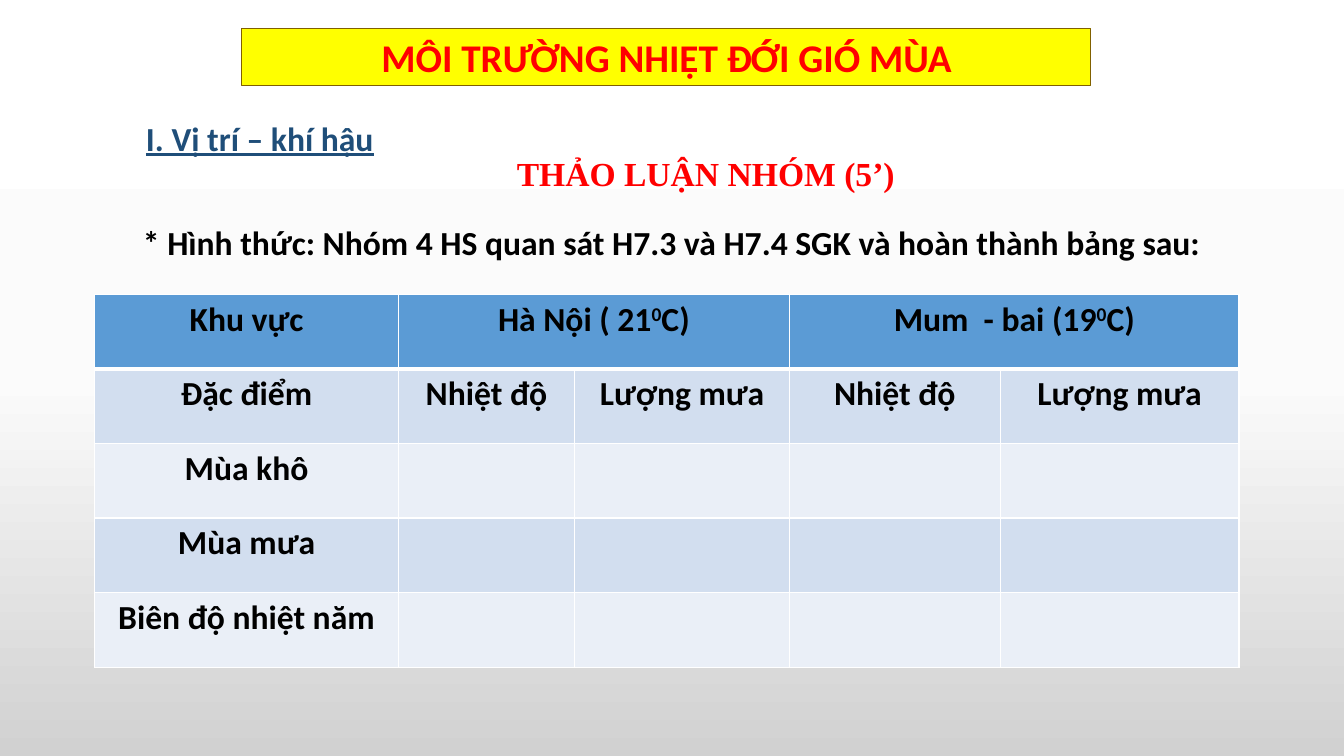
from lxml import etree
from pptx import Presentation
from pptx import util as u
from pptx.dml.color import RGBColor
from pptx.enum import shapes, text
from pptx.oxml.ns import qn

PX = 9144  # 100 px to the inch
COLORS = {
    "red": "FF0000", "yellow": "FFFF00", "olive": "806000", "navy": "1F4E79",
    "black": "000000", "white": "FFFFFF", "header": "5B9BD5",
    "band_dark": "D2DEEF", "band_light": "EAEFF7",
    "bg_mid": "FBFBFB", "bg_end": "D1D1D1",
}
CENTER = text.PP_ALIGN.CENTER


def rgb(name):
    return RGBColor.from_string(COLORS[name])


def write(tf, parts, color="black", size=24, font="Calibri", align=CENTER, underline=None):
    """Fill the first paragraph; every second part is superscript."""
    p = tf.paragraphs[0]
    p.alignment = align
    p.font.name, p.font.size, p.font.bold = font, u.Pt(size), True
    p.font.color.rgb = rgb(color)
    p.font.underline = underline
    for i, part in enumerate(parts):
        r = p.add_run()
        r.text = part
        if i % 2:
            r._r.get_or_add_rPr().set("baseline", "30000")


prs = Presentation()
prs.slide_width, prs.slide_height = 1333 * PX, 750 * PX
s = prs.slides.add_slide(prs.slide_layouts[6])

# Background gradient, top to bottom
bg = s.background.fill
bg.gradient()
bg.gradient_angle = 270
stops = s._element.find(".//" + qn("a:gsLst"))
stops.clear()
for pos, name in [(0, "white"), (50, "bg_mid"), (100, "bg_end")]:
    gs = etree.SubElement(stops, qn("a:gs"), pos=str(pos * 1000))
    etree.SubElement(gs, qn("a:srgbClr"), val=COLORS[name])

# Title banner
sp = s.shapes.add_shape(shapes.MSO_SHAPE.RECTANGLE, 240 * PX, 28 * PX, 842 * PX, 57 * PX)
sp.shadow.inherit = False
sp.fill.solid()
sp.fill.fore_color.rgb = rgb("yellow")
sp.line.color.rgb = rgb("olive")
sp.line.width = u.Pt(0.75)
sp.text_frame.vertical_anchor = text.MSO_ANCHOR.TOP
write(sp.text_frame, ["MÔI TRƯỜNG NHIỆT ĐỚI GIÓ MÙA"], "red", 28)

# Headings and task
LEFT, JUSTIFY = text.PP_ALIGN.LEFT, text.PP_ALIGN.JUSTIFY
TOP, MIDDLE = text.MSO_ANCHOR.TOP, text.MSO_ANCHOR.MIDDLE
labels = [
    ((471, 143, 458, 58), "THẢO LUẬN NHÓM (5’)", True, MIDDLE,
     dict(color="red", font="Times New Roman")),
    ((135, 112, 270, 50), "I. Vị trí – khí hậu", False, TOP,
     dict(color="navy", align=JUSTIFY, underline=True)),
    ((132, 215, 1136, 50),
     "* Hình thức: Nhóm 4 HS quan sát H7.3 và H7.4 SGK và hoàn thành bảng sau:",
     True, TOP, dict(align=LEFT)),
]
for box, words, wrap, anchor, style in labels:
    tf = s.shapes.add_textbox(*(n * PX for n in box)).text_frame
    tf.word_wrap, tf.vertical_anchor = wrap, anchor
    write(tf, [words], **style)

# Climate table
widths = [301, 175, 213, 209, 237]
row_height = 74
rows = [
    [["Khu vực"], ["Hà Nội ( 21", "0", "C)"], [], ["Mum  - bai (19", "0", "C)"], []],
    [["Đặc điểm"]] + [["Nhiệt độ"], ["Lượng mưa"]] * 2,
    [["Mùa khô"]] + [[]] * 4,
    [["Mùa mưa"]] + [[]] * 4,
    [["Biên độ nhiệt năm"]] + [[]] * 4,
]
table = s.shapes.add_table(len(rows), len(widths), 94 * PX, 292 * PX,
                           sum(widths) * PX, len(rows) * row_height * PX).table
for col, width in zip(table.columns, widths):
    col.width = width * PX
for i, row in enumerate(rows):
    table.rows[i].height = row_height * PX
    fill = "header" if i == 0 else "band_dark" if i % 2 else "band_light"
    for j, parts in enumerate(row):
        cell = table.cell(i, j)
        tcPr = cell._tc.get_or_add_tcPr()
        for side in ("lnL", "lnR", "lnT", "lnB"):
            thick = (i, side) in [(0, "lnB"), (1, "lnT")]
            ln = etree.SubElement(tcPr, qn("a:" + side), w=str(u.Pt(3 if thick else 1)))
            solid = etree.SubElement(ln, qn("a:solidFill"))
            etree.SubElement(solid, qn("a:srgbClr"), val=COLORS["white"])
        cell.fill.solid()
        cell.fill.fore_color.rgb = rgb(fill)
        write(cell.text_frame, parts)
for j in (1, 3):
    table.cell(0, j).merge(table.cell(0, j + 1))

prs.save("out.pptx")
